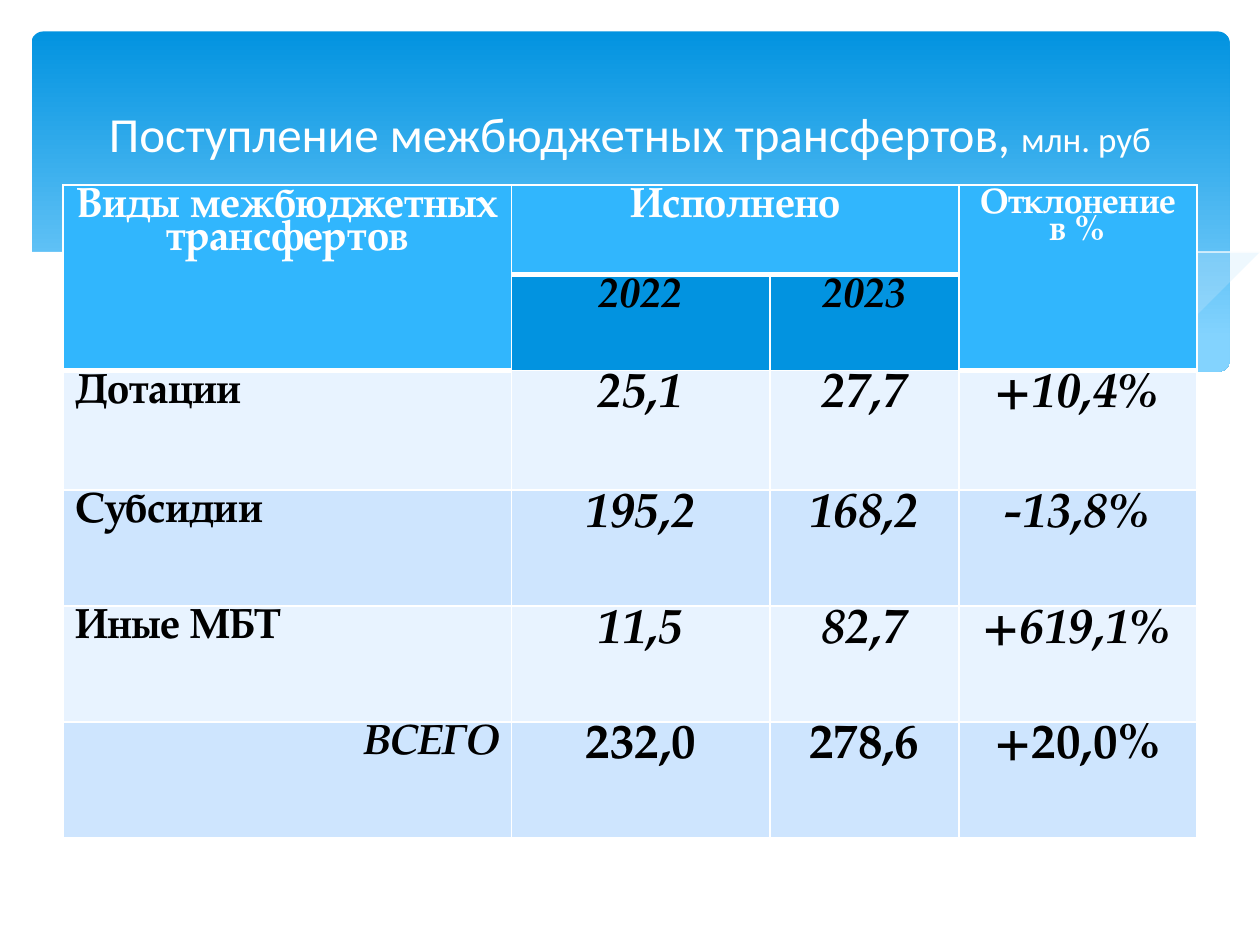
from lxml import etree
from pptx import Presentation
from pptx.dml.color import RGBColor
from pptx.enum.shapes import MSO_SHAPE
from pptx.enum.text import MSO_ANCHOR, PP_ALIGN
from pptx.oxml.ns import qn
from pptx.util import Inches, Pt

LEFT, MID, RIGHT = PP_ALIGN.LEFT, PP_ALIGN.CENTER, PP_ALIGN.RIGHT
MIDDLE = MSO_ANCHOR.MIDDLE
ROUND = MSO_SHAPE.ROUNDED_RECTANGLE

WHITE = RGBColor(0xFF, 0xFF, 0xFF)
BLACK = RGBColor(0, 0, 0)
DEEP = RGBColor(0x02, 0x93, 0xE0)
SKY = RGBColor(0x83, 0xD3, 0xFE)
MIST = RGBColor(0xC6, 0xE7, 0xFC)
HEAD = RGBColor(0x31, 0xB6, 0xFD)
BANDS = RGBColor(0xE8, 0xF3, 0xFF), RGBColor(0xCE, 0xE5, 0xFE)

SERIF = "TeX Gyre Pagella"
TOP = dict(name=SERIF, size=Pt(24), bold=True, color=WHITE)
SMALL = dict(TOP, size=Pt(20))
YEAR = dict(TOP, italic=True, color=BLACK)
LABEL = dict(TOP, italic=False, color=BLACK)
VALUE = dict(YEAR, size=Pt(28))
SUM = dict(LABEL, size=Pt(28))
TITLE = dict(name="Calibri", size=Pt(28), color=WHITE)
UNIT = dict(TITLE, size=Pt(20))

COLS = [3.56, 2.05, 1.5, 1.89]
ROWS = [0.71, 0.76, 0.95, 0.92, 0.92, 0.92]
HEAD_END = [1, 0, 0, 1]  # last header row of each column
DATA = [
    ("Дотации", "25,1", "27,7", "+10,4%"),
    ("Субсидии", "195,2", "168,2", "-13,8%"),
    ("Иные МБТ", "11,5", "82,7", "+619,1%"),
    ("ВСЕГО", "232,0", "278,6", "+20,0%"),
]

# Waves: points, fill, opacity in percent (no fill means a white line)
WAVES = [
    ([(9.75, 2), (9.48, 2.04), (9.21, 2.1), (8.61, 2.23), (8.05, 2.37),
      (7.53, 2.48), (7.06, 2.57), (6.61, 2.65), (7.05, 2.71), (7.45, 2.75),
      (8.03, 2.78), (8.54, 2.76), (8.97, 2.7), (9.35, 2.62), (9.76, 2.47),
      (9.76, 2)], MIST, 29),
    ([(8.93, 2.73), (8.37, 2.65), (7.75, 2.54), (7.06, 2.4), (6.29, 2.22),
      (5.69, 2.08), (5.14, 1.98), (4.65, 1.91), (4.2, 1.87), (3.61, 1.85),
      (3.13, 1.88), (2.86, 1.91), (3.42, 1.99), (4.04, 2.11), (4.91, 2.32),
      (5.66, 2.48), (6.34, 2.61), (6.95, 2.7), (7.48, 2.76), (8.07, 2.78),
      (8.57, 2.77)], MIST, 40),
    ([(3.09, 1.95), (3.44, 1.9), (4.01, 1.87), (4.5, 1.88), (5.1, 1.92),
      (5.82, 2), (6.65, 2.13), (7.27, 2.26), (7.95, 2.41), (9.07, 2.72)],
     None, 100),
    ([(6.13, 2.57), (6.72, 2.41), (7.48, 2.23), (8.06, 2.1), (8.66, 1.99),
      (9.1, 1.92), (9.51, 1.87), (9.75, 1.85)], None, 100),
    ([(9.77, 2.46), (9.5, 2.56), (9.2, 2.65), (8.87, 2.71), (8.5, 2.75),
      (8.09, 2.77), (7.61, 2.75), (7.08, 2.7), (6.48, 2.62), (5.79, 2.5),
      (5.03, 2.33), (4.47, 2.2), (3.91, 2.07), (3.4, 1.97), (2.92, 1.9),
      (2.5, 1.86), (1.93, 1.84), (1.46, 1.85), (1.06, 1.89), (0.76, 1.95),
      (0.52, 2.01), (0.36, 2.07), (0.23, 2.13), (0.23, 3.29), (9.77, 3.29)],
     WHITE, 100),
]


def style(font, form):
    for key, val in form.items():
        if key == "color":
            font.color.rgb = val
        else:
            setattr(font, key, val)


def add_run(para, text, form):
    run = para.add_run()
    run.text = text
    style(run.font, form)


def add_panel(shapes):
    panel = shapes.add_shape(ROUND, Inches(0.25), Inches(0.25),
                             Inches(9.51), Inches(2.7))
    panel.adjustments[0] = 0.034
    panel.shadow.inherit = False
    panel.line.fill.background()
    panel.fill.gradient()
    panel.fill.gradient_angle = 270
    for stop, color, pos in zip(panel.fill.gradient_stops, (DEEP, SKY), (0, 0.9)):
        stop.color.rgb = color
        stop.position = pos


def add_wave(shapes, points, color, alpha):
    scale = Inches(1)
    pen = shapes.build_freeform(*points[0], scale=scale)
    pen.add_line_segments(points[1:], close=color is not None)
    wave = pen.convert_to_shape()
    wave.shadow.inherit = False
    if color is None:
        wave.fill.background()
        wave.line.color.rgb = WHITE
        wave.line.width = Pt(0)
        return
    wave.line.fill.background()
    wave.fill.solid()
    wave.fill.fore_color.rgb = color
    if alpha < 100:
        tone = wave.fill._xPr.find(".//" + qn("a:srgbClr"))
        etree.SubElement(tone, qn("a:alpha"), val=str(alpha * 1000))


def add_edges(cell, row, col):
    """White borders, heavier along the lower end of the header."""
    end = HEAD_END[col]
    widths = dict(L=1, R=1, T=3 if row == end + 1 else 1, B=3 if row <= end else 1)
    props = cell._tc.get_or_add_tcPr()
    for side, width in widths.items():
        edge = etree.SubElement(props, qn("a:ln" + side), w=str(Pt(width)))
        fill = etree.SubElement(edge, qn("a:solidFill"))
        etree.SubElement(fill, qn("a:srgbClr"), val=str(WHITE))


def fill_cell(cell, text, form, color, align=MID):
    cell.fill.solid()
    cell.fill.fore_color.rgb = color
    frame = cell.text_frame
    for num, line in enumerate(text.split("\n")):
        para = frame.add_paragraph() if num else frame.paragraphs[0]
        para.alignment = align
        para.line_spacing = 0.8
        add_run(para, line, form)


def add_grid(shapes):
    table = shapes.add_table(len(ROWS), len(COLS), Inches(0.5), Inches(1.47),
                             Inches(sum(COLS)), Inches(sum(ROWS))).table
    for col, width in zip(table.columns, COLS):
        col.width = Inches(width)
    for row, height in zip(table.rows, ROWS):
        row.height = Inches(height)
    for row in range(len(ROWS)):
        for col in range(len(COLS)):
            add_edges(table.cell(row, col), row, col)
    for start, end in (((0, 0), (1, 0)), ((0, 1), (0, 2)), ((0, 3), (1, 3))):
        table.cell(*start).merge(table.cell(*end))

    fill_cell(table.cell(0, 0), "Виды межбюджетных \nтрансфертов", TOP, HEAD)
    fill_cell(table.cell(0, 1), "Исполнено", TOP, HEAD)
    fill_cell(table.cell(0, 3), "Отклонение в %", SMALL, HEAD)
    for col, year in enumerate(("2022", "2023"), 1):
        fill_cell(table.cell(1, col), year, YEAR, DEEP)
    for num, (label, *values) in enumerate(DATA):
        band, row = BANDS[num % 2], num + 2
        total = num == len(DATA) - 1
        fill_cell(table.cell(row, 0), label, YEAR if total else LABEL, band,
                  RIGHT if total else LEFT)
        for col, value in enumerate(values, 1):
            fill_cell(table.cell(row, col), value, SUM if total else VALUE, band)


def set_title(shapes):
    title = shapes.title
    shapes._spTree.append(title._element)  # bring to front
    title.left, title.top = Inches(0.5), Inches(0.37)
    title.width, title.height = Inches(9), Inches(1.37)
    frame = title.text_frame
    frame.word_wrap = True
    frame.vertical_anchor = MIDDLE
    para = frame.paragraphs[0]
    para.alignment = MID
    add_run(para, "Поступление межбюджетных трансфертов, ", TITLE)
    add_run(para, "млн. руб", UNIT)


def main():
    deck = Presentation()
    deck.slide_width, deck.slide_height = Inches(10), Inches(7.5)
    shapes = deck.slides.add_slide(deck.slide_layouts[5]).shapes
    add_panel(shapes)
    for wave in WAVES:
        add_wave(shapes, *wave)
    add_grid(shapes)
    set_title(shapes)
    deck.save("out.pptx")


if __name__ == "__main__":
    main()
